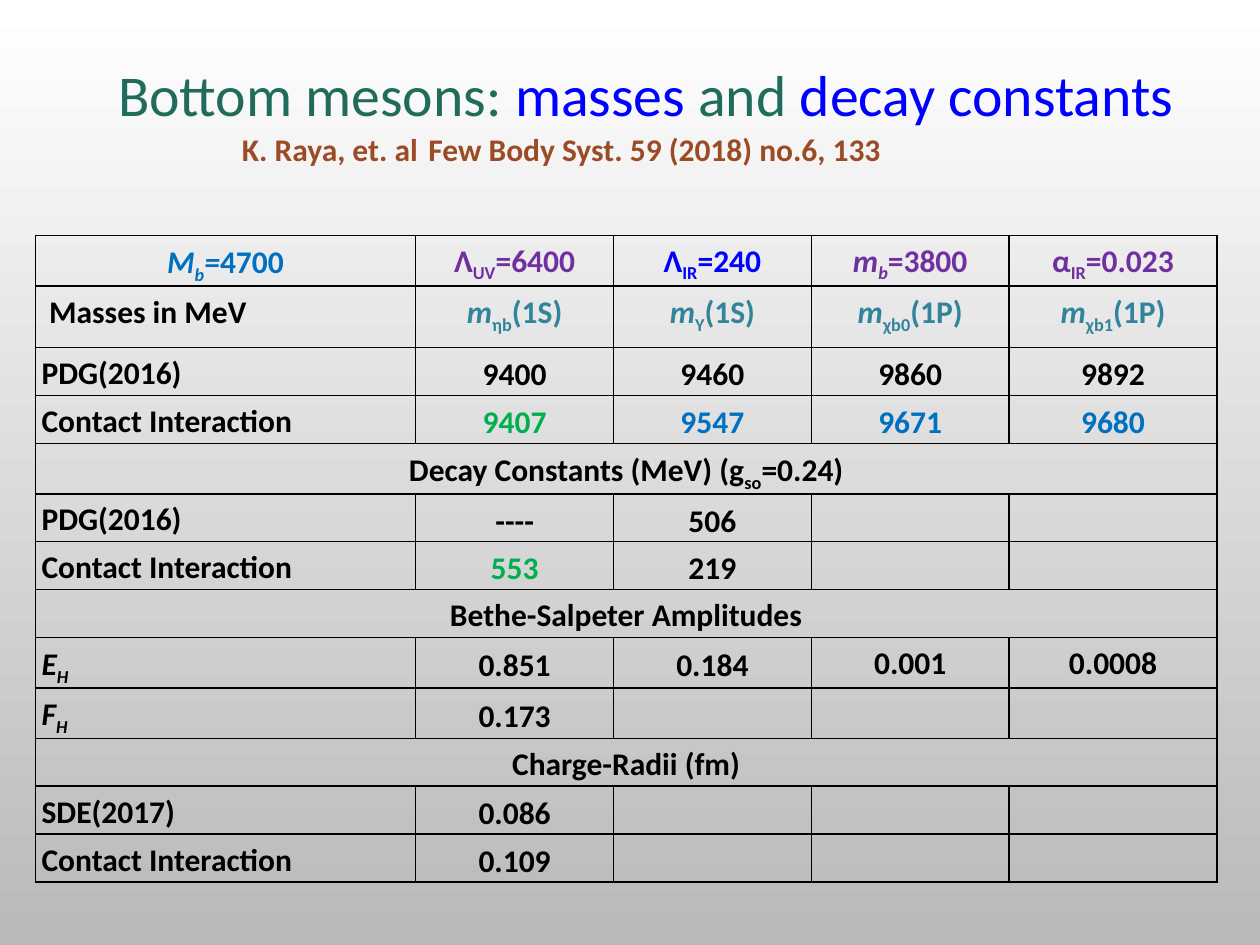
from lxml.etree import SubElement
from pptx import Presentation
from pptx.dml.color import RGBColor
from pptx.enum.text import MSO_ANCHOR as Anchor, MSO_AUTO_SIZE as AutoSize, PP_ALIGN as Align
from pptx.oxml.ns import qn
from pptx.util import Inches, Pt

FONT = "Calibri"
BLACK = RGBColor(0x00, 0x00, 0x00)
WHITE = RGBColor(0xFF, 0xFF, 0xFF)
GRAY = RGBColor(0xB9, 0xB9, 0xB9)
BLUE = RGBColor(0x00, 0x00, 0xFF)
SKY = RGBColor(0x00, 0x70, 0xC0)
PURPLE = RGBColor(0x70, 0x30, 0xA0)
TEAL = RGBColor(0x31, 0x84, 0x9B)
GREEN = RGBColor(0x00, 0xB0, 0x50)
FOREST = RGBColor(0x20, 0x6B, 0x5A)
BROWN = RGBColor(0x9B, 0x4C, 0x25)

COLUMN_WIDTHS = [3.02, 1.57, 1.57, 1.57, 1.65]
ROW_HEIGHTS = [0.39, 0.49] + [0.38] * 11

# A symbol cell is (colour, [(text, flags)]): i is italic, s is subscript.
PARAMETERS = [
    (SKY, [("M", "i"), ("b", "is"), ("=", "i"), ("4700", "")]),
    (PURPLE, [("Λ", ""), ("UV", "s"), ("=6400", "")]),
    (BLUE, [("Λ", ""), ("IR", "s"), ("=240", "")]),
    (PURPLE, [("m", "i"), ("b", "is"), ("=3800", "")]),
    (PURPLE, [("α", ""), ("IR", "s"), ("=0.023", "")]),
]
MESONS = [("ηb", "(1S)"), ("Υ", "(1S)"), ("χb0", "(1P)"), ("χb1", "(1P)")]
MASS_HEADINGS = ["Masses in MeV"] + [
    (TEAL, [("m", "i"), (meson, "s"), (state, "")]) for meson, state in MESONS
]
ROWS = [
    PARAMETERS,
    MASS_HEADINGS,
    ["PDG(2016)", "9400", "9460", "9860", "9892"],
    ["Contact Interaction", (GREEN, [("9407", "")])]
    + [(SKY, [(mass, "")]) for mass in ("9547", "9671", "9680")],
    [(BLACK, [("Decay Constants (MeV) (g", ""), ("so", "s"), ("=0.24)", "")])],
    ["PDG(2016)", "----", "506"],
    ["Contact Interaction", (GREEN, [("553", "")]), "219"],
    ["Bethe-Salpeter Amplitudes"],
    [(BLACK, [("E", "i"), ("H", "is")]), "0.851", "0.184", "0.001", "0.0008"],
    [(BLACK, [("F", "i"), ("H", "is")]), "0.173"],
    ["Charge-Radii (fm)"],
    ["SDE(2017)", "0.086"],
    ["Contact Interaction", "0.109"],
]
AMPLITUDE_ROW = 8


def add_span(para, text, size, color, bold=False, flags=""):
    span = para.add_run()
    span.text = text
    font = span.font
    font.name, font.size, font.bold = FONT, Pt(size), bold
    font.color.rgb = color
    font.italic = "i" in flags
    if "s" in flags:
        font._element.set("baseline", "-25000")


def paint_background(slide):
    fill = slide.background.fill
    fill.gradient()
    fill.gradient_angle = 270
    for stop, color in zip(fill.gradient_stops, (WHITE, GRAY)):
        stop.color.rgb = color


def add_title(slide):
    title = slide.shapes.title
    title.left, title.top = Inches(0.41), Inches(0.24)
    title.width, title.height = Inches(9.33), Inches(0.83)
    frame = title.text_frame
    frame.auto_size = AutoSize.NONE
    frame.vertical_anchor = Anchor.BOTTOM
    frame.margin_left = Inches(0.2)
    para = frame.paragraphs[0]
    para.alignment = Align.CENTER
    for text, color in [("Bottom mesons: ", FOREST), ("masses", BLUE),
                        (" and ", FOREST), ("decay constants", BLUE)]:
        add_span(para, text, 33, color)


def add_citation(slide):
    box = slide.shapes.add_textbox(Inches(0.24), Inches(0.98), Inches(10.16), Inches(1.01))
    frame = box.text_frame
    frame.word_wrap = True
    frame.margin_left = Inches(1.68)
    para = frame.paragraphs[0]
    tabs = SubElement(para._p.get_or_add_pPr(), qn("a:tabLst"))
    SubElement(tabs, qn("a:tab"), pos=str(Inches(1.48)), algn="l")
    add_span(para, "K. Raya, et. al\tFew Body Syst. 59 (2018) no.6, 133", 18, BROWN, bold=True)


def draw_borders(cell):
    properties = cell._tc.get_or_add_tcPr()
    for side in ("lnL", "lnR", "lnT", "lnB"):
        line = SubElement(properties, qn(f"a:{side}"), w=str(Pt(1)))
        fill = SubElement(line, qn("a:solidFill"))
        SubElement(fill, qn("a:srgbClr"), val=str(BLACK))


def format_cell(cell):
    draw_borders(cell)
    cell.fill.background()
    cell.margin_left = cell.margin_right = Inches(0.05)
    cell.margin_top, cell.margin_bottom = Inches(0.01), 0


def fill_cell(cell, content, centered):
    color, pieces = (BLACK, [(content, "")]) if isinstance(content, str) else content
    para = cell.text_frame.paragraphs[0]
    para.alignment = Align.CENTER if centered else Align.LEFT
    para.line_spacing = 1.15
    para.space_after = Pt(10)
    for text, flags in pieces:
        add_span(para, text, 18, color, bold=True, flags=flags)


def add_results_table(slide):
    table = slide.shapes.add_table(
        len(ROWS), len(COLUMN_WIDTHS), Inches(0.28), Inches(1.87),
        Inches(sum(COLUMN_WIDTHS)), Inches(sum(ROW_HEIGHTS))).table
    table.first_row = table.horz_banding = False
    for column, width in zip(table.columns, COLUMN_WIDTHS):
        column.width = Inches(width)
    for row, height in zip(table.rows, ROW_HEIGHTS):
        row.height = Inches(height)
    for cell in table.iter_cells():
        format_cell(cell)

    last_column = len(COLUMN_WIDTHS) - 1
    for r, contents in enumerate(ROWS):
        is_section = len(contents) == 1
        if is_section:
            table.cell(r, 0).merge(table.cell(r, last_column))
        for c, content in enumerate(contents):
            cell = table.cell(r, c)
            fill_cell(cell, content, centered=c > 0 or r == 0 or is_section)
            if r == 0 and c > 0:
                cell.margin_left = cell.margin_right = cell.margin_top = 0
            if r > 1 and c > 0 and not (r == AMPLITUDE_ROW and c > 2):
                cell.vertical_anchor = Anchor.MIDDLE
    table.cell(1, 0).margin_left = Inches(0.11)


def main():
    deck = Presentation()
    deck.slide_width, deck.slide_height = Inches(10), Inches(7.5)
    slide = deck.slides.add_slide(deck.slide_layouts[5])
    paint_background(slide)
    add_results_table(slide)
    add_citation(slide)
    add_title(slide)
    deck.save("out.pptx")


if __name__ == "__main__":
    main()
